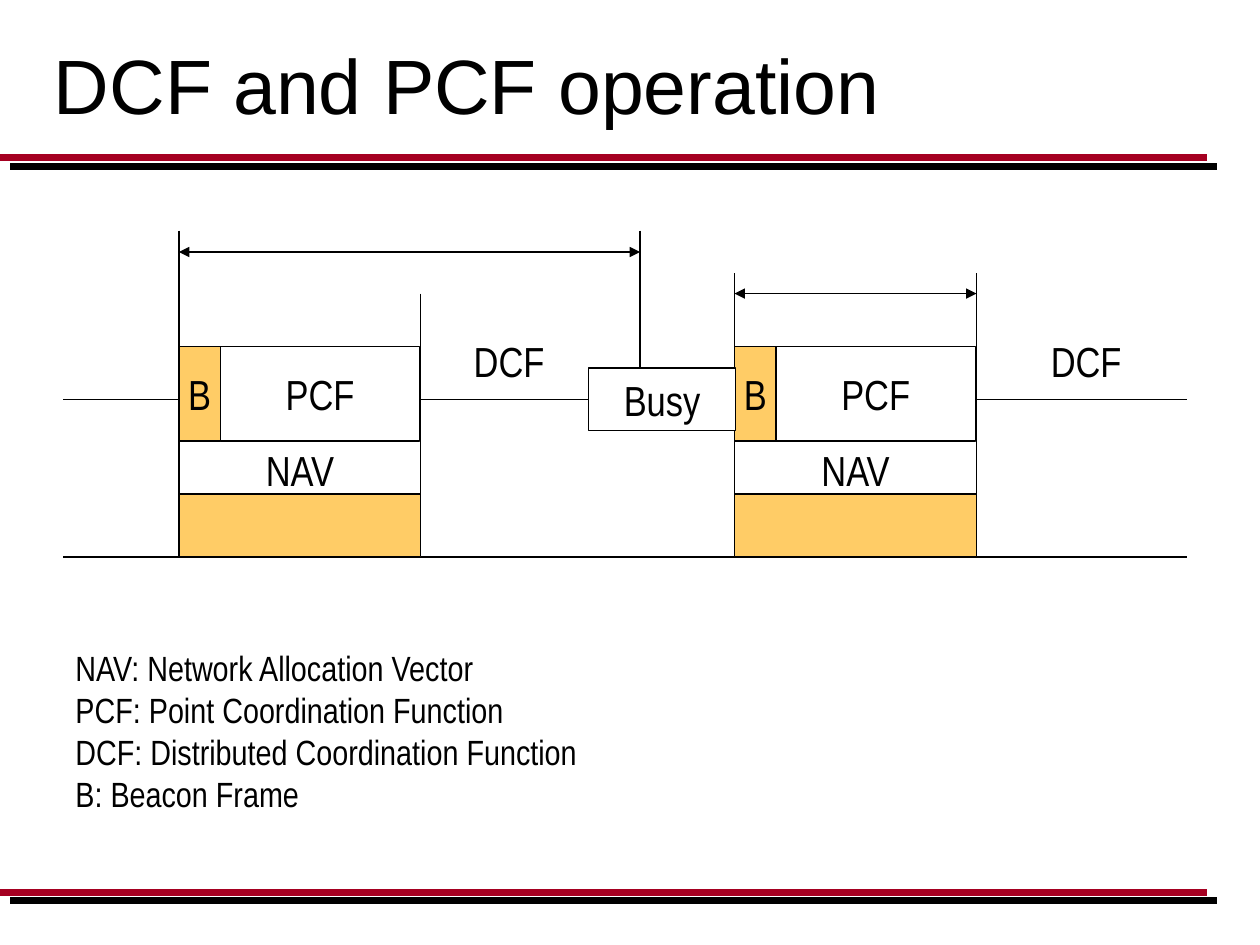
from lxml.etree import SubElement
from pptx import Presentation
from pptx.dml.color import RGBColor
from pptx.enum.shapes import MSO_CONNECTOR, MSO_SHAPE
from pptx.enum.text import MSO_ANCHOR, PP_ALIGN
from pptx.oxml.ns import qn
from pptx.util import Inches, Pt

deck = Presentation()
deck.slide_width, deck.slide_height = Inches(10), Inches(7.5)
slide = deck.slides.add_slide(deck.slide_layouts[6])
shapes = slide.shapes
color = RGBColor.from_string


def line(x1, y1, x2, y2, tint="000000", width=0.75, arrows=False):
    link = shapes.add_connector(MSO_CONNECTOR.STRAIGHT, Inches(x1), Inches(y1),
                                Inches(x2), Inches(y2))
    link.line.color.rgb = color(tint)
    link.line.width = Pt(width)
    props = link._element.spPr
    if arrows:
        for end in ("a:headEnd", "a:tailEnd"):
            SubElement(props.find(qn("a:ln")), qn(end), type="triangle")
    SubElement(props, qn("a:effectLst"))


def box(x, y, w, h, text="", fill=None, space=None):
    """Filled box, or a plain label when no fill is given."""
    place = Inches(x), Inches(y), Inches(w), Inches(h)
    if fill:
        item = shapes.add_shape(MSO_SHAPE.RECTANGLE, *place)
        item.shadow.inherit = False
        item.fill.solid()
        item.fill.fore_color.rgb = color(fill)
        item.line.color.rgb = color("000000")
        item.line.width = Pt(0.75)
    else:
        item = shapes.add_textbox(*place)
    if text:
        frame = item.text_frame
        frame.word_wrap = False
        frame.vertical_anchor = MSO_ANCHOR.MIDDLE
        para = frame.paragraphs[0]
        para.alignment = PP_ALIGN.CENTER
        para.line_spacing = space
        run = para.add_run()
        run.text = text
        run.font.size = Pt(24)
        run.font.name = "Arial Narrow"
        run.font.color.rgb = color("000000")


# Red rules with black rules just below
for y in (1.25, 7.08):
    line(0.08, y + 0.07, 9.66, y + 0.07, width=4)
    line(0, y, 9.58, y, "A50021", 4)

# Title
title = shapes.add_textbox(Inches(0.33), Inches(0), Inches(9.17), Inches(1.33))
title.text_frame.word_wrap = True
title.text_frame.vertical_anchor = MSO_ANCHOR.MIDDLE
run = title.text_frame.paragraphs[0].add_run()
run.text = "DCF and PCF operation"
run.font.size = Pt(44)
run.font.name = "Arial"
run.font.color.rgb = color("000000")

# Time axes
for y in (3.17, 4.42):
    line(0.5, y, 9.42, y)

# Two periods: beacon, PCF and NAV, between upright marks
for left, top, last in ((1.42, 1.83, 2.33), (5.83, 2.17, 2.17)):
    line(left, top, left, 4.42)
    line(left + 1.92, last, left + 1.92, 4.42)
    box(left, 3.92, 1.92, 0.5, fill="FFCC66")
    box(left + 0.17, 3.61, 1.58, 0.33, "NAV", space=0.7)
    box(left, 2.75, 0.33, 0.75, "B", "FFCC66")
    box(left + 0.33, 2.75, 1.58, 0.75, "PCF", "FFFFFF")

# Spans
line(5.08, 1.83, 5.08, 3)
line(1.42, 2, 5.08, 2, arrows=True)
line(5.83, 2.33, 7.75, 2.33, arrows=True)

# Busy medium and DCF labels
box(4.67, 2.92, 1.17, 0.5, "Busy", "FFFFFF")
for x in (3.25, 7.83):
    box(x, 2.75, 1.58, 0.33, "DCF", space=0.7)

# Legend
key = shapes.add_textbox(Inches(0.5), Inches(5.08), Inches(6.58), Inches(1.43))
key.text_frame.word_wrap = True
para = key.text_frame.paragraphs[0]
terms = ("NAV: Network Allocation Vector", "PCF: Point Coordination Function",
         "DCF: Distributed Coordination Function", "B: Beacon Frame")
for i, term in enumerate(terms):
    if i:
        para.add_line_break()
    run = para.add_run()
    run.text = term
    run.font.size = Pt(20)
    run.font.name = "Arial Narrow"
    run.font.color.rgb = color("000000")

deck.save("out.pptx")
